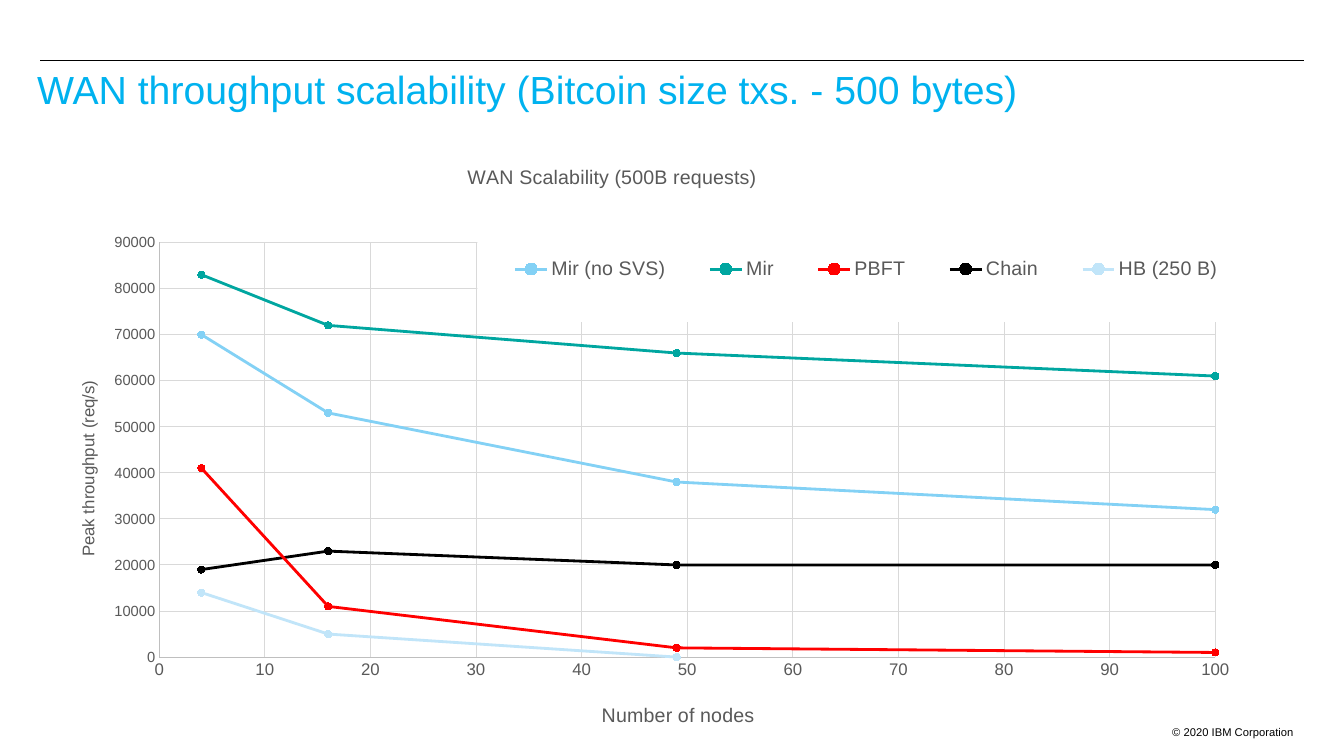
from pptx import Presentation
from pptx.chart.data import XyChartData
from pptx.dml.color import RGBColor
from pptx.enum.chart import XL_CHART_TYPE, XL_LEGEND_POSITION, XL_MARKER_STYLE, XL_TICK_MARK
from pptx.enum.shapes import MSO_CONNECTOR
from pptx.enum.text import PP_ALIGN
from pptx.oxml import parse_xml
from pptx.oxml.ns import nsdecls, qn
from pptx.util import Inches, Pt

SCATTER = XL_CHART_TYPE.XY_SCATTER_SMOOTH
BOTTOM = XL_LEGEND_POSITION.BOTTOM
CIRCLE = XL_MARKER_STYLE.CIRCLE
NO_TICK = XL_TICK_MARK.NONE
LEFT, RIGHT = PP_ALIGN.LEFT, PP_ALIGN.RIGHT
FONT = "Arial"
COLORS = {
    "black": "000000", "title": "00B2EF", "label": "595959",
    "axis": "BFBFBF", "grid": "D9D9D9",
    "Mir (no SVS)": "83D1F5", "Mir": "00A6A0", "PBFT": "FF0000",
    "Chain": "000000", "HB (250 B)": "C1E5F9",
}
NODES = [4, 16, 49, 100]
THROUGHPUT = {
    "Mir (no SVS)": [70000, 53000, 38000, 32000],
    "Mir": [83000, 72000, 66000, 61000],
    "PBFT": [41000, 11000, 2000, 1000],
    "Chain": [19000, 23000, 20000, 20000],
    "HB (250 B)": [14000, 5000, 0],
}


def style(font, size, color):
    font.name = FONT
    font.size = Pt(size)
    font.bold = False
    font.color.rgb = RGBColor.from_string(COLORS[color])


def place(element, index, x, y, w=None, h=None, inner=False):
    for old in element.findall(qn("c:layout")):
        element.remove(old)
    target = '<c:layoutTarget val="inner"/>' if inner else ""
    size = f'<c:w val="{w}"/><c:h val="{h}"/>' if w else ""
    element.insert(index, parse_xml(
        f'<c:layout {nsdecls("c")}><c:manualLayout>{target}'
        '<c:xMode val="edge"/><c:yMode val="edge"/>'
        f'<c:x val="{x}"/><c:y val="{y}"/>{size}</c:manualLayout></c:layout>'))


prs = Presentation()
prs.slide_width = Inches(13.33)
prs.slide_height = Inches(7.5)
s = prs.slides.add_slide(prs.slide_layouts[6])

rule = s.shapes.add_connector(MSO_CONNECTOR.STRAIGHT, Inches(0.4), Inches(0.6), Inches(12.93), Inches(0.6))
rule.line.color.rgb = RGBColor.from_string(COLORS["black"])
rule.line.width = Pt(0.75)
rule._element.spPr.append(parse_xml(f'<a:effectLst {nsdecls("a")}/>'))

for text, left, top, width, height, size, color, align, spacing in [
    ("© 2020 IBM Corporation", 10.93, 7.15, 2, 0.2, 8, "black", RIGHT, 1.0),
    ("WAN throughput scalability (Bitcoin size txs. - 500 bytes)",
     0.27, 0.65, 12.67, 0.8, 28, "title", LEFT, 0.9),
]:
    tf = s.shapes.add_textbox(Inches(left), Inches(top), Inches(width), Inches(height)).text_frame
    tf.word_wrap = True
    p = tf.paragraphs[0]
    p.text = text
    p.alignment = align
    p.line_spacing = spacing
    style(p.font, size, color)

data = XyChartData()
for name, values in THROUGHPUT.items():
    series = data.add_series(name)
    for x, y in zip(NODES, values):
        series.add_data_point(x, y)
chart = s.shapes.add_chart(SCATTER, Inches(-0.59), Inches(1.35), Inches(13.31), Inches(6.14), data).chart
style(chart.font, 10, "black")
plot = chart.plots[0]
plot.vary_by_categories = False
for series in plot.series:
    color = RGBColor.from_string(COLORS[series.name])
    series.smooth = True
    series.format.line.color.rgb = color
    series.format.line.width = Pt(2)
    marker = series.marker
    marker.style = CIRCLE
    marker.size = 5
    for part in (marker.format.fill, marker.format.line.fill):
        part.solid()
        part.fore_color.rgb = color

for axis, top_value, step, size in [
    (chart.category_axis, 100, 10, 12),
    (chart.value_axis, 90000, 10000, 10.5),
]:
    axis.minimum_scale = 0
    axis.maximum_scale = top_value
    axis.major_unit = step
    axis.major_tick_mark = axis.minor_tick_mark = NO_TICK
    axis.has_major_gridlines = True
    for line, color in [(axis.format.line, "axis"), (axis.major_gridlines.format.line, "grid")]:
        line.color.rgb = RGBColor.from_string(COLORS[color])
        line.width = Pt(0.75)
    axis.tick_labels.number_format = "General"
    axis.tick_labels.number_format_is_linked = False
    style(axis.tick_labels.font, size, "label")

chart.has_title = True
for title, text, size, x, y in [
    (chart.chart_title, "WAN Scalability (500B requests)", 14, 0.39, 0.04),
    (chart.category_axis.axis_title, "Number of nodes", 14, 0.49, 0.91),
    (chart.value_axis.axis_title, "Peak throughput (req/s)", 12, 0.1, 0.39),
]:
    p = title.text_frame.paragraphs[0]
    p.text = text
    style(p.font, size, "label")
    place(title._element, 1, x, y)

chart.has_legend = True
legend = chart.legend
legend.position = BOTTOM
legend.include_in_layout = False
style(legend.font, 14, "label")
place(legend._element, 1, 0.4, 0.13, 0.58, 0.17)
legend._element.find(qn("c:overlay")).addnext(parse_xml(
    f'<c:spPr {nsdecls("c", "a")}><a:solidFill><a:srgbClr val="FFFFFF"/></a:solidFill>'
    '<a:ln><a:noFill/></a:ln></c:spPr>'))
place(chart._chartSpace.chart.plotArea, 0, 0.163, 0.172, 0.787, 0.67, inner=True)

prs.save("out.pptx")
